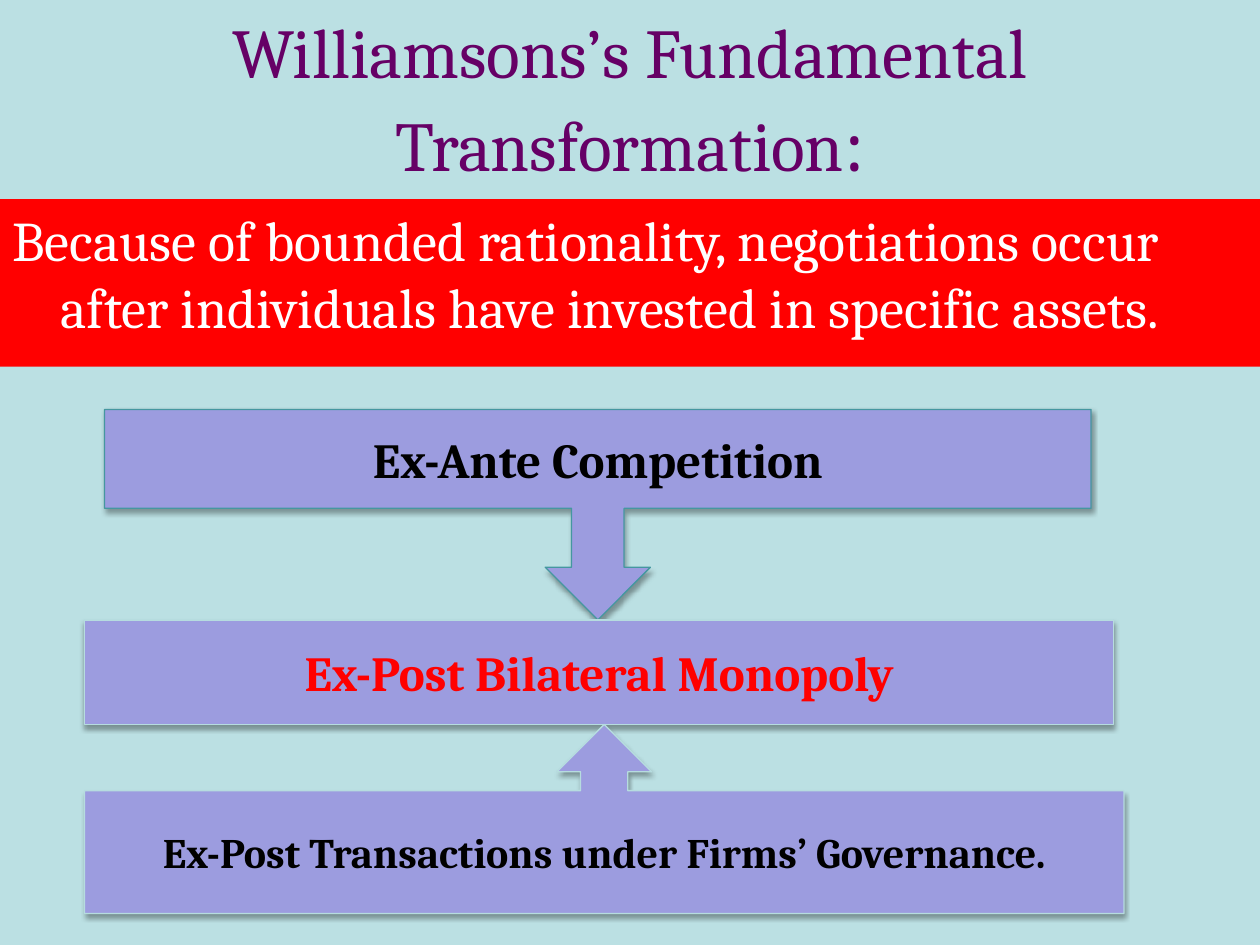
from dataclasses import dataclass

from lxml import etree
from pptx import Presentation
from pptx import util as u
from pptx.dml.color import RGBColor
from pptx.enum import shapes, text
from pptx.oxml import ns


@dataclass(frozen=True)
class Theme:
    """Colours, type sizes and font of the slide."""
    font: str = "Cambria"
    page: str = "BBE0E3"
    title: str = "660066"
    red: str = "FF0000"
    white: str = "FFFFFF"
    black: str = "000000"
    step: str = "9C9CDF"
    dark_edge: str = "4597A0"
    light_edge: str = "B6DCDF"
    title_size: int = 40
    colon_size: int = 45
    body_size: int = 32
    step_size: int = 28
    note_size: int = 24
    edge_width: float = 0.75


THEME = Theme()


def style_span(span, size, color, bold=False):
    """Set the font of one run."""
    span.font.name = THEME.font
    span.font.size = u.Pt(size)
    span.font.bold = bold
    span.font.color.rgb = RGBColor.from_string(color)


def add_shadow(shape):
    """Give a shape a soft shadow straight below it."""
    shape.shadow.inherit = False
    effects = shape._element.spPr.find(ns.qn("a:effectLst"))
    shadow = etree.SubElement(
        effects, ns.qn("a:outerShdw"), blurRad=str(u.Pt(3.1)),
        dist=str(u.Pt(1.8)), dir="5400000", rotWithShape="0")
    color = etree.SubElement(shadow, ns.qn("a:srgbClr"), val=THEME.black)
    etree.SubElement(color, ns.qn("a:alpha"), val="35000")


def add_title(page, bounds):
    """Write the centred heading with its larger colon."""
    box = page.shapes.add_textbox(*map(u.Inches, bounds))
    frame = box.text_frame
    frame.word_wrap = True
    frame.vertical_anchor = text.MSO_ANCHOR.MIDDLE
    para = frame.paragraphs[0]
    para.alignment = text.PP_ALIGN.CENTER
    for wording, size in (
            ("Williamsons’s Fundamental Transformation", THEME.title_size),
            (":", THEME.colon_size)):
        span = para.add_run()
        span.text = wording
        style_span(span, size, THEME.title)


def add_banner(page, bounds, wording):
    """Write the premise with a hanging indent on a red band."""
    box = page.shapes.add_textbox(*map(u.Inches, bounds))
    box.fill.solid()
    box.fill.fore_color.rgb = RGBColor.from_string(THEME.red)
    frame = box.text_frame
    frame.word_wrap = True
    frame.text = wording
    para = frame.paragraphs[0]
    properties = para._p.get_or_add_pPr()
    properties.set("marL", str(u.Inches(0.38)))
    properties.set("indent", str(-u.Inches(0.38)))
    style_span(para.runs[0], THEME.body_size, THEME.white)


def add_step(page, bounds, kind, wording, size, color, edge):
    """Draw one lilac step with a bold centred label."""
    box = page.shapes.add_shape(kind, *map(u.Inches, bounds))
    box.fill.solid()
    box.fill.fore_color.rgb = RGBColor.from_string(THEME.step)
    box.line.color.rgb = RGBColor.from_string(edge)
    box.line.width = u.Pt(THEME.edge_width)
    add_shadow(box)
    frame = box.text_frame
    frame.word_wrap = True
    frame.vertical_anchor = text.MSO_ANCHOR.MIDDLE
    frame.text = wording
    para = frame.paragraphs[0]
    para.alignment = text.PP_ALIGN.CENTER
    style_span(para.runs[0], size, color, bold=True)
    return box


def add_steps(page, left, top):
    """Stack the three steps, with arrows meeting at the middle one."""
    kinds = shapes.MSO_SHAPE
    before = add_step(
        page, (left + 0.16, top, 7.83, 1.67), kinds.DOWN_ARROW_CALLOUT,
        "Ex-Ante Competition", THEME.step_size, THEME.black, THEME.dark_edge)
    before.adjustments[3] = 0.47
    add_step(
        page, (left, top + 1.67, 8.17, 0.83), kinds.RECTANGLE,
        "Ex-Post Bilateral Monopoly", THEME.step_size, THEME.red,
        THEME.light_edge)
    add_step(
        page, (left, top + 2.5, 8.25, 1.5), kinds.UP_ARROW_CALLOUT,
        "Ex-Post Transactions under Firms’ Governance.", THEME.note_size,
        THEME.black, THEME.light_edge)


def main():
    """Build the slide and save it."""
    deck = Presentation()
    deck.slide_width, deck.slide_height = u.Inches(10), u.Inches(7.5)
    page = deck.slides.add_slide(deck.slide_layouts[6])
    page.background.fill.solid()
    page.background.fill.fore_color.rgb = RGBColor.from_string(THEME.page)
    add_title(page, (0, 0.25, 10, 1.06))
    add_banner(
        page, (0, 1.58, 10, 1.33),
        "Because of bounded rationality, negotiations occur after "
        "individuals have invested in specific assets.")
    add_steps(page, 0.67, 3.25)
    deck.save("out.pptx")


if __name__ == "__main__":
    main()
